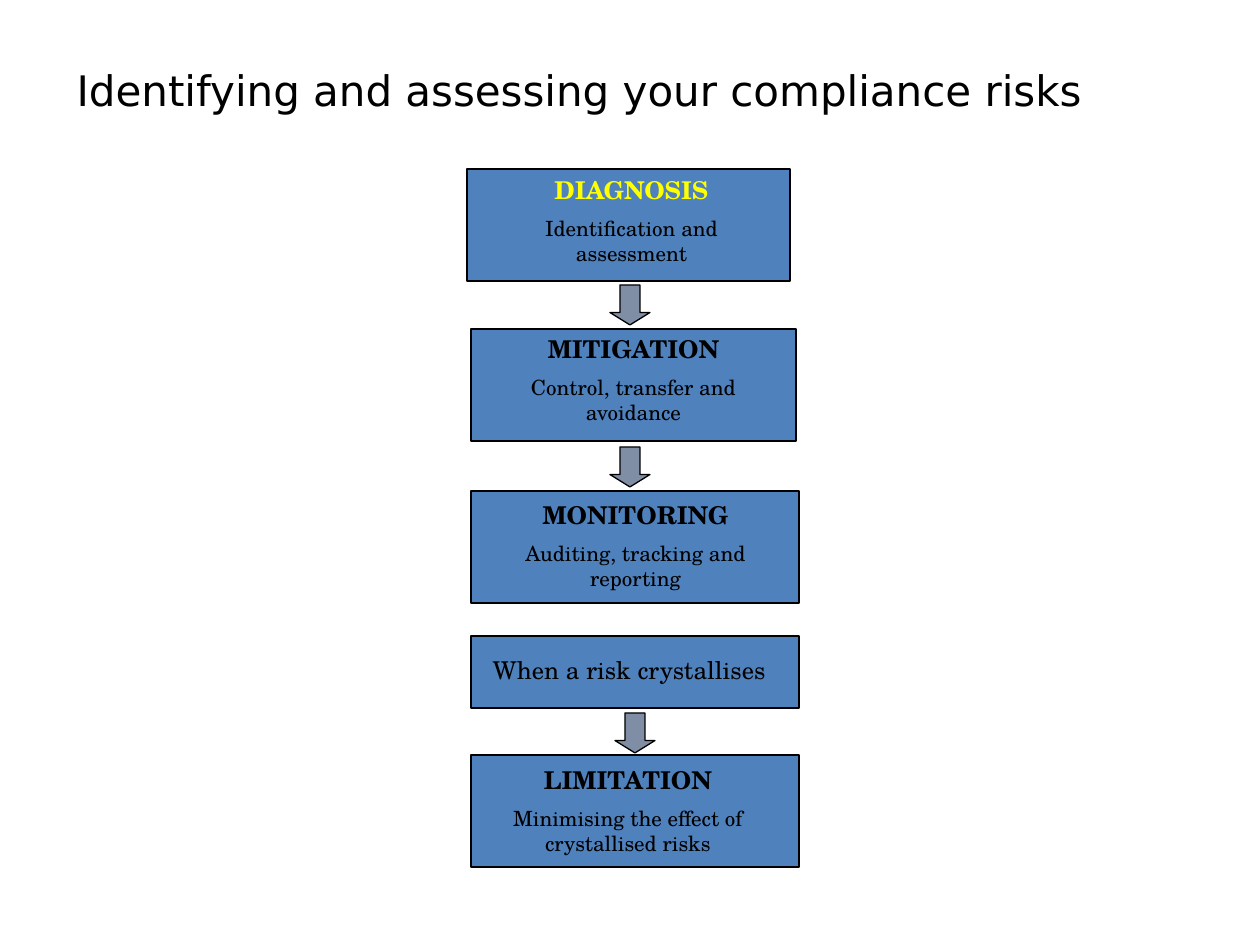
from pptx import Presentation
from pptx.dml.color import RGBColor
from pptx.enum.shapes import MSO_SHAPE as Shape
from pptx.enum.text import MSO_ANCHOR as Anchor, PP_ALIGN as Align
from pptx.util import Emu, Pt

SCALE = 914400 / 126
SANS = "DejaVu Sans"
SERIF = "TeX Gyre Schola"
BLACK = RGBColor(0x00, 0x00, 0x00)
YELLOW = RGBColor(0xFF, 0xFF, 0x00)
BLUE = RGBColor(0x4F, 0x81, 0xBD)
GREY = RGBColor(0x7F, 0x8E, 0xA5)

TITLE = "Identifying and assessing your compliance risks"
BOXES = [
    (467, 169, 323, 112),
    (471, 329, 325, 112),
    (471, 491, 328, 112),
    (471, 636, 328, 72),
    (471, 755, 328, 112),
]
STAGES = [
    ((491, 169, 281, 142), "DIAGNOSIS", "Identification and assessment", YELLOW),
    ((493, 328, 281, 142), "MITIGATION", "Control, transfer and avoidance", BLACK),
    ((470, 494, 331, 125), "MONITORING", "Auditing, tracking and reporting", BLACK),
    ((459, 759, 338, 142), "LIMITATION",
     "Minimising the effect of crystallised risks", BLACK),
]
EVENT = (377, 649, 432, 43), "When a risk crystallises"
EVENT_INSET = 85
ARROWS = [(610, 285), (610, 447), (615, 713)]
ARROW_SIZE = 40


def px(*sizes):
    return [Emu(round(size * SCALE)) for size in sizes]


def style(para, text, size, color, name=SERIF, bold=False):
    para.text = text
    font = para.font
    font.name, font.size, font.bold = name, Pt(size), bold
    font.color.rgb = color


def add_title(slide):
    title = slide.shapes.title
    title.left, title.top, title.width, title.height = px(64, 45, 1145, 90)
    frame = title.text_frame
    frame.vertical_anchor = Anchor.MIDDLE
    para = frame.paragraphs[0]
    para.alignment = Align.LEFT
    style(para, TITLE, 24, BLACK, SANS)


def add_solid(slide, kind, place, color):
    shape = slide.shapes.add_shape(kind, *px(*place))
    shape.shadow.inherit = False
    shape.fill.solid()
    shape.fill.fore_color.rgb = color
    shape.line.color.rgb = BLACK
    shape.line.width = Pt(0.75)
    return shape


def add_arrow(slide, left, top):
    place = (left, top, ARROW_SIZE, ARROW_SIZE)
    arrow = add_solid(slide, Shape.DOWN_ARROW, place, GREY)
    arrow.adjustments[0] = 0.5
    arrow.adjustments[1] = 0.31


def add_text(slide, place, head, color, bold):
    frame = slide.shapes.add_textbox(*px(*place)).text_frame
    frame.word_wrap = True
    para = frame.paragraphs[0]
    para.alignment = Align.CENTER
    style(para, head, 14, color, bold=bold)
    return frame


def add_stage(slide, place, head, note, color):
    frame = add_text(slide, place, head, color, True)
    para = frame.add_paragraph()
    para.alignment = Align.CENTER
    para.space_before = Pt(6)
    style(para, note, 12, BLACK)


def main():
    deck = Presentation()
    deck.slide_width, deck.slide_height = px(1260, 945)
    slide = deck.slides.add_slide(deck.slide_layouts[5])
    add_title(slide)
    for place in BOXES:
        add_solid(slide, Shape.RECTANGLE, place, BLUE)
    for stage in STAGES:
        add_stage(slide, *stage)
    event = add_text(slide, *EVENT, BLACK, False)
    event.margin_left = px(EVENT_INSET)[0]
    for spot in ARROWS:
        add_arrow(slide, *spot)
    deck.save("out.pptx")


if __name__ == "__main__":
    main()
